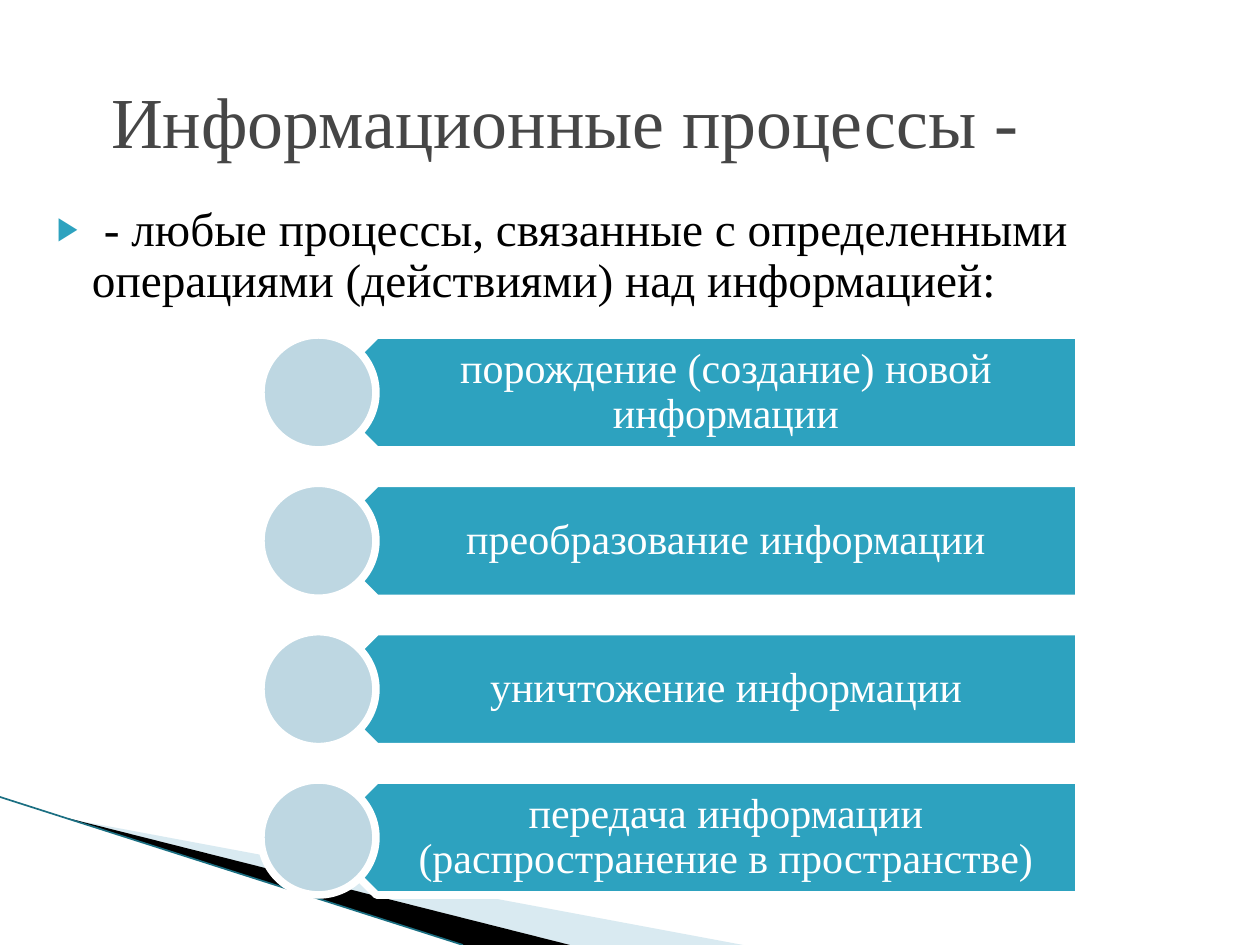
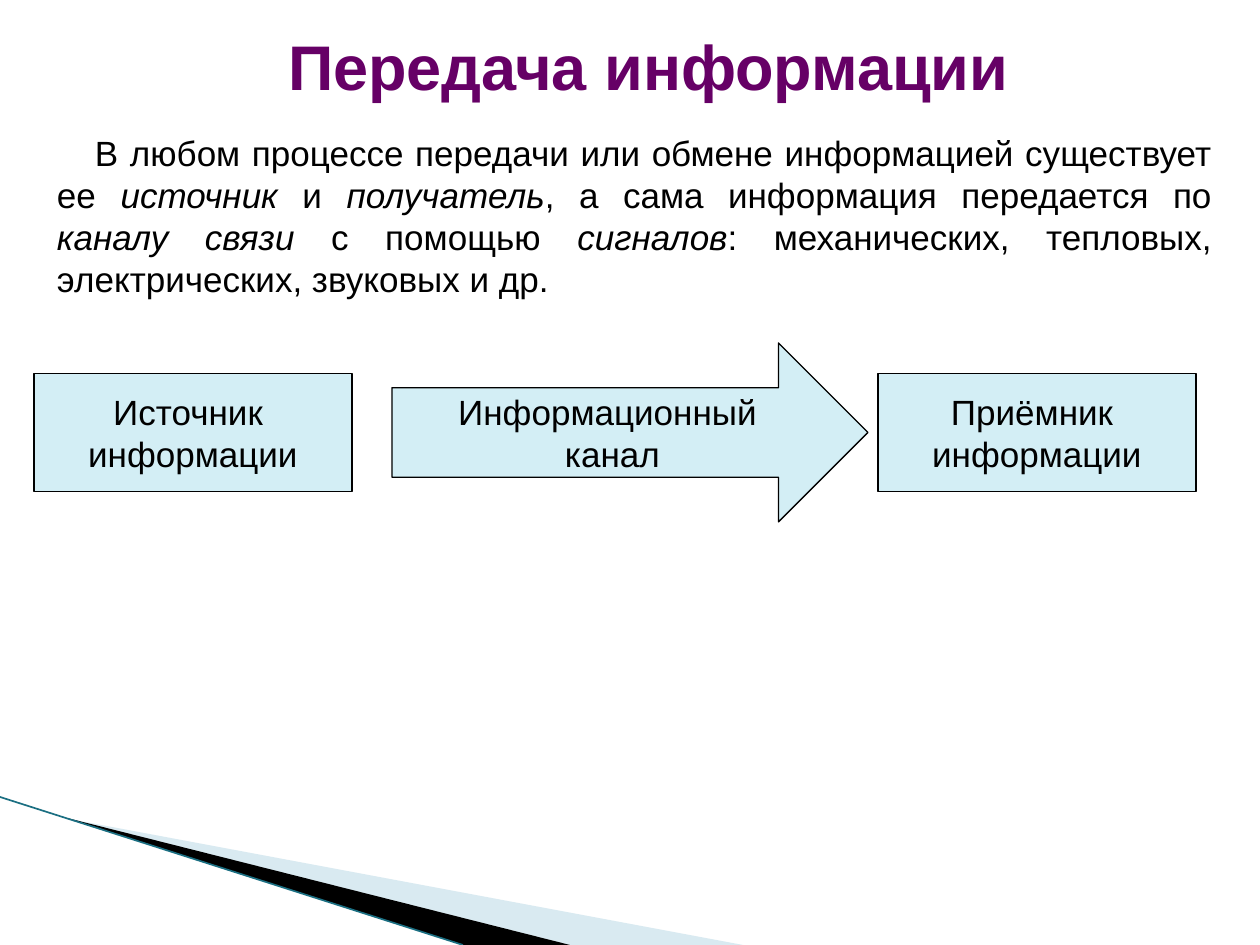
from lxml import etree
from pptx import Presentation, util as u
from pptx.dml.color import RGBColor
from pptx.enum import shapes, text
from pptx.oxml import ns

PX = u.Inches(1) / 126
WHITE = RGBColor(0xFF, 0xFF, 0xFF)
BLACK = RGBColor(0x00, 0x00, 0x00)
GREY = RGBColor(0x46, 0x46, 0x46)
PURPLE = RGBColor(0x66, 0x00, 0x66)
TEAL = RGBColor(0x2D, 0xA2, 0xBF)
DARK_TEAL = RGBColor(0x1B, 0x6F, 0x82)
SKY = RGBColor(0xA0, 0xCB, 0xDC)
PALE_BLUE = RGBColor(0xBE, 0xD7, 0xE2)
PALE_CYAN = RGBColor(0xD3, 0xEE, 0xF5)
SERIF, SANS = "Times New Roman", "Arial"
LEFT, CENTER, JUSTIFY = text.PP_ALIGN.LEFT, text.PP_ALIGN.CENTER, text.PP_ALIGN.JUSTIFY
TOP, MIDDLE = text.MSO_ANCHOR.TOP, text.MSO_ANCHOR.MIDDLE
SHAPE = shapes.MSO_SHAPE

OPERATIONS = [
    "порождение (создание) новой информации",
    "преобразование информации",
    "уничтожение информации",
    "передача информации (распространение в пространстве)",
]


def emu(*lengths):
    """Turn px lengths into EMU."""
    return [round(n * PX) for n in lengths]


def add_xml(parent, tag, **attrs):
    """Append a DrawingML element."""
    return etree.SubElement(parent, ns.qn(tag), attrs)


def assign(target, values):
    """Set attributes from a dict."""
    for name, value in values.items():
        setattr(target, name, value)


def paint(sp, fill, line=None, width=0.75):
    """Give a shape its fill and outline and no shadow."""
    sp.shadow.inherit = False
    sp.fill.solid()
    sp.fill.fore_color.rgb = fill
    if line is None:
        sp.line.fill.background()
    else:
        sp.line.color.rgb = line
        sp.line.width = u.Pt(width)


def write(sp, paragraphs, font, color, align=CENTER, anchor=MIDDLE, margins=(13, 6, 13, 6), **spacing):
    """Fill a shape with paragraphs, where asterisks enclose italics."""
    tf = sp.text_frame
    sides = ("margin_left", "margin_top", "margin_right", "margin_bottom")
    assign(tf, {"word_wrap": True, "auto_size": text.MSO_AUTO_SIZE.NONE,
                "vertical_anchor": anchor, **dict(zip(sides, emu(*margins)))})
    for i, content in enumerate(paragraphs):
        p = tf.add_paragraph() if i else tf.paragraphs[0]
        assign(p, {"alignment": align, **spacing})
        for j, part in enumerate(content.split("*")):
            r = p.add_run()
            r.text = part
            assign(r.font, {**font, "italic": j % 2 == 1})
            r.font.color.rgb = color
    return tf


def text_box(s, box, paragraphs, font, color, **layout):
    """Add a text box."""
    return write(s.shapes.add_textbox(*emu(*box)), paragraphs, font, color, **layout)


def title(s, box, content, font, color, align):
    """Place and format the title placeholder."""
    sp = s.shapes.title
    assign(sp, dict(zip(("left", "top", "width", "height"), emu(*box))))
    write(sp, [content], font, color, align=align)


def wedge(s, points, fill):
    """Draw one sliver of the corner decoration."""
    (x, y), *rest = points
    builder = s.shapes.build_freeform(x, y, scale=PX)
    builder.add_line_segments(rest)
    sp = builder.convert_to_shape()
    paint(sp, fill)
    return sp


def corner(s, box):
    """Draw the slanted decoration in the lower left corner."""
    x, y, w, h = box
    bottom = y + h
    sky = wedge(s, [(x + 69, y + 22), (x + w, bottom), (x + 570, bottom)], SKY)
    add_xml(sky.fill._xPr.find(ns.qn("a:solidFill"))[0], "a:alpha", val="40000")
    wedge(s, [(x + 67, y + 21), (x + 570, bottom), (x + 463, bottom)], BLACK)
    edge = s.shapes.add_connector(shapes.MSO_CONNECTOR.STRAIGHT, *emu(x, y, x + 463, bottom))
    edge.line.color.rgb = DARK_TEAL
    edge.line.width = u.Pt(0.95)
    add_xml(edge._element.spPr, "a:effectLst")


def definition(s, box, content):
    """Add the bulleted definition."""
    tf = s.shapes.add_textbox(*emu(*box))
    p = tf.text_frame.paragraphs[0]
    pPr = p._p.get_or_add_pPr()
    pPr.set("marL", str(emu(50)[0]))
    pPr.set("indent", str(emu(-35)[0]))
    add_xml(add_xml(pPr, "a:buClr"), "a:srgbClr", val=str(TEAL))
    add_xml(pPr, "a:buSzPct", val="68000")
    add_xml(pPr, "a:buFont", typeface=SANS)
    add_xml(pPr, "a:buChar", char="▶")
    write(tf, [content], {"name": SERIF, "size": u.Pt(27)}, BLACK,
          align=LEFT, anchor=TOP, line_spacing=0.9)


def operation(s, box, label):
    """Draw one banner with its disc."""
    x, y, w, h = box
    banner = s.shapes.add_shape(SHAPE.PENTAGON, *emu(x + 58, y, w - 58, h))
    banner.rotation = 180
    paint(banner, TEAL, WHITE, 4.33)
    text_box(s, (x + 86, y, w - 86, h), [label], {"name": SERIF, "size": u.Pt(24)}, WHITE,
             margins=(50, 13, 24, 13), line_spacing=0.9)
    disc = s.shapes.add_shape(SHAPE.OVAL, *emu(x, y, h, h))
    paint(disc, PALE_BLUE, WHITE, 4.33)


def operation_list(s, box, labels):
    """Stack the banners with equal gaps."""
    x, y, w, h = box
    row = 115
    pitch = (h - row) / (len(labels) - 1)
    for i, label in enumerate(labels):
        operation(s, (x, y + i * pitch, w, row), label)


def channel_diagram(s, box):
    """Draw source, channel and receiver in a row."""
    x, y, w, h = box
    node_w, node_h = 318, 118
    node_y = y + (h - node_h) / 2
    parts = [
        (SHAPE.RECTANGLE, (x, node_y, node_w, node_h), ["Источник ", "информации"]),
        (SHAPE.RECTANGLE, (x + w - node_w, node_y, node_w, node_h), ["Приёмник ", "информации"]),
        (SHAPE.RIGHT_ARROW, (x + 358, y, 476, h), ["Информационный", " канал"]),
    ]
    for kind, place, lines in parts:
        sp = s.shapes.add_shape(kind, *emu(*place))
        paint(sp, PALE_CYAN, BLACK)
        write(sp, lines, {"name": SANS, "size": u.Pt(20)}, BLACK)


def new_slide(prs):
    """Add a title-only slide with the corner decoration."""
    s = prs.slides.add_slide(prs.slide_layouts[5])
    corner(s, (0, 797, 743, 148))
    return s


def processes_slide(prs):
    """Build the slide on information processes."""
    s = new_slide(prs)
    title(s, (98, 59, 1142, 121), "Информационные процессы -",
          {"name": SERIF, "size": u.Pt(41)}, GREY, LEFT)
    definition(s, (29, 200, 1082, 130),
               " - любые процессы, связанные с определенными операциями (действиями) над информацией:")
    operation_list(s, (261, 335, 818, 560), OPERATIONS)


def transfer_slide(prs):
    """Build the slide on information transfer."""
    s = new_slide(prs)
    tf = text_box(s, (44, 125, 1181, 180), [
        "В любом процессе передачи или обмене информацией существует ее *источник* и *получатель*, "
        "а сама информация передается по *каналу связи* с помощью *сигналов*: механических, "
        "тепловых, электрических, звуковых и др."],
        {"name": SANS, "size": u.Pt(20)}, BLACK, align=JUSTIFY, anchor=TOP)
    tf.paragraphs[0]._p.get_or_add_pPr().set("indent", str(emu(38)[0]))
    title(s, (243, 26, 811, 78), "Передача информации",
          {"name": SANS, "size": u.Pt(36), "bold": True}, PURPLE, CENTER)
    channel_diagram(s, (34, 343, 1162, 179))


def main():
    """Build and save the presentation."""
    prs = Presentation()
    prs.slide_width, prs.slide_height = emu(1260, 945)
    processes_slide(prs)
    transfer_slide(prs)
    prs.save("out.pptx")


if __name__ == "__main__":
    main()
